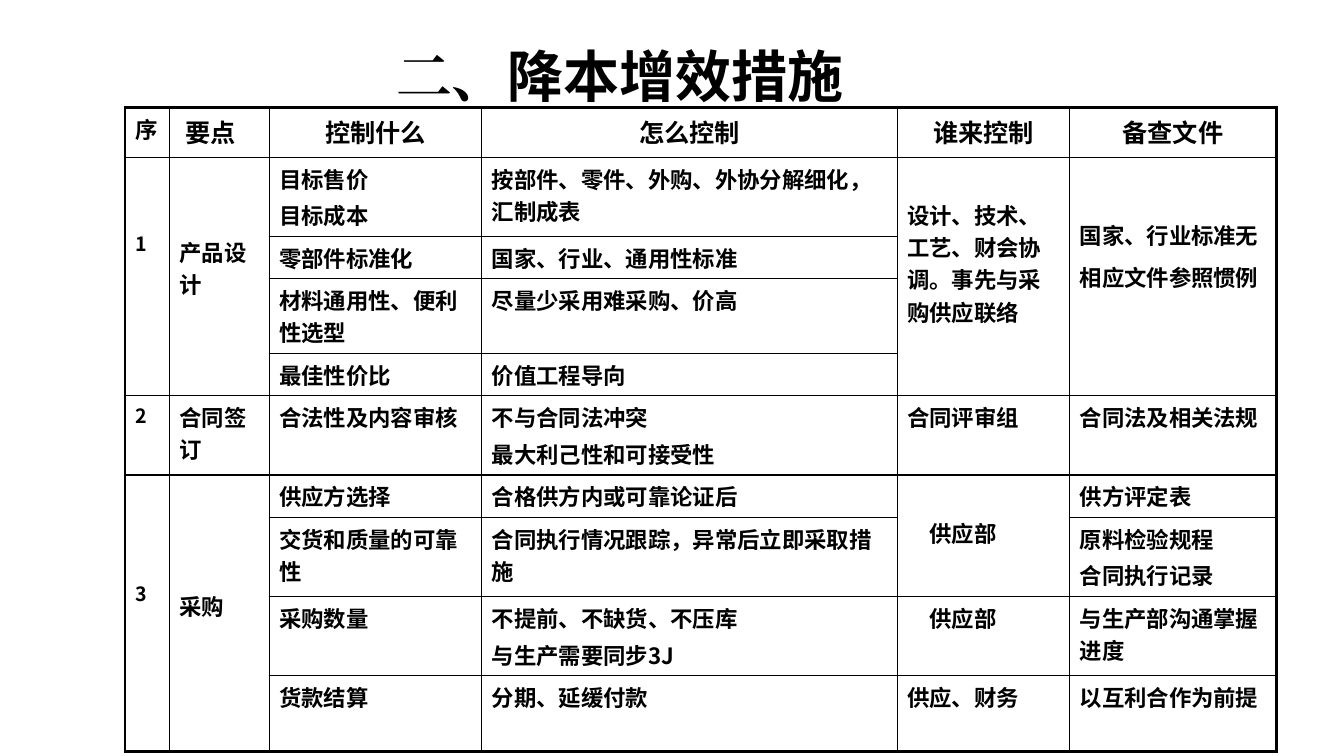
from lxml import etree
from pptx import Presentation
from pptx import util as u
from pptx.dml.color import RGBColor
from pptx.enum import text
from pptx.oxml import ns

COLUMN_WIDTHS = [0.44, 0.99, 2.11, 4.12, 1.71, 2.05]
ROW_HEIGHTS = [0.49, 0.75, 0.4, 0.69, 0.4, 0.75, 0.4, 0.75, 0.75, 0.75]
HEADINGS = ["序", "要点", "控制什么", "怎么控制", "谁来控制", "备查文件"]
MEASURES = [
    ["1", "产品设计", "目标售价\n目标成本", "按部件、零件、外购、外协分解细化，汇制成表",
     "设计、技术、工艺、财会协调。事先与采购供应联络", "国家、行业标准无相应文件参照惯例"],
    ["", "", "零部件标准化", "国家、行业、通用性标准", "", ""],
    ["", "", "材料通用性、便利性选型", "尽量少采用难采购、价高", "", ""],
    ["", "", "最佳性价比", "价值工程导向", "", ""],
    ["2", "合同签订", "合法性及内容审核", "不与合同法冲突\n最大利己性和可接受性",
     "合同评审组", "合同法及相关法规"],
    ["3", "采购", "供应方选择", "合格供方内或可靠论证后", "供应部", "供方评定表"],
    ["", "", "交货和质量的可靠性", "合同执行情况跟踪，异常后立即采取措施", "",
     "原料检验规程\n合同执行记录"],
    ["", "", "采购数量", "不提前、不缺货、不压库\n与生产需要同步3J", "供应部", "与生产部沟通掌握进度"],
    ["", "", "货款结算", "分期、延缓付款", "供应、财务", "以互利合作为前提"],
]
MERGED_ROWS = {(1, 0): 4, (1, 1): 4, (1, 4): 4, (1, 5): 4,
               (6, 0): 4, (6, 1): 4, (6, 4): 2}
TOP_MARGINS = {(1, 0): 0.71, (1, 1): 0.78, (1, 4): 0.41, (1, 5): 0.51,
               (6, 0): 1.03, (6, 1): 1.14, (6, 4): 0.41}
LEFT_MARGINS = {(0, 1): 0.16, (6, 4): 0.32, (8, 4): 0.32}
LINE_SPACING = {(1, 5): 1.3}


def color(value):
    return RGBColor.from_string(value)


class SlideBuilder:
    """Holds the ink, table font and current slide, and adds elements to it."""

    def __init__(self, slide, ink="000000", table_font="Noto Sans CJK SC"):
        self.slide = slide
        self.ink = ink
        self.table_font = table_font

    def style_run(self, run, size, family):
        run.font.size = u.Pt(size)
        run.font.bold = True
        run.font.name = family
        run.font.color.rgb = color(self.ink)
        east_asian = etree.SubElement(run.font._element, ns.qn("a:ea"))
        east_asian.set("typeface", family)

    def title(self, parts, left, top, width, height):
        box = self.slide.shapes.add_textbox(*map(u.Inches, (left, top, width, height)))
        box.text_frame.word_wrap = True
        for wording, family in parts:
            run = box.text_frame.paragraphs[0].add_run()
            run.text = wording
            self.style_run(run, 40, family)

    def border(self, cell, side, width):
        line = etree.SubElement(cell._tc.get_or_add_tcPr(), ns.qn(f"a:ln{side}"))
        line.set("w", str(u.Pt(width)))
        fill = etree.SubElement(line, ns.qn("a:solidFill"))
        etree.SubElement(fill, ns.qn("a:srgbClr")).set("val", self.ink)

    def cell(self, cell, wording, place):
        row, column = place
        cell.margin_top = u.Inches(TOP_MARGINS.get(place, 0.05))
        cell.margin_left = u.Inches(LEFT_MARGINS.get(place, 0.1))
        cell.text_frame.text = wording
        if row == 0:
            size = 18 if column else 16
        else:
            size = 16 if column else 14
        for number, paragraph in enumerate(cell.text_frame.paragraphs):
            if number:
                paragraph.space_before = u.Pt(size * 0.2)
            if place in LINE_SPACING:
                paragraph.line_spacing = LINE_SPACING[place]
            if row == 0 and column > 1:
                paragraph.alignment = text.PP_ALIGN.CENTER
            for run in paragraph.runs:
                self.style_run(run, size, self.table_font)

    def table(self, rows, left, top):
        size = sum(COLUMN_WIDTHS), sum(ROW_HEIGHTS)
        table = self.slide.shapes.add_table(
            len(rows), len(rows[0]), *map(u.Inches, (left, top, *size))).table
        table.first_row = table.horz_banding = False
        for column, width in zip(table.columns, COLUMN_WIDTHS):
            column.width = u.Inches(width)
        for row, height in zip(table.rows, ROW_HEIGHTS):
            row.height = u.Inches(height)
        for (row, column), span in MERGED_ROWS.items():
            table.cell(row, column).merge(table.cell(row + span - 1, column))
        last_row, last_column = len(rows) - 1, len(rows[0]) - 1
        for row, wordings in enumerate(rows):
            for column, wording in enumerate(wordings):
                cell = table.cell(row, column)
                bottom_row = row + MERGED_ROWS.get((row, column), 1) - 1
                outer = {"L": column == 0, "R": column == last_column,
                         "T": row == 0, "B": bottom_row == last_row}
                for side, on_edge in outer.items():
                    self.border(cell, side, 2.25 if on_edge else 1)
                cell.fill.background()
                if wording:
                    self.cell(cell, wording, (row, column))


def main():
    deck = Presentation()
    deck.slide_width, deck.slide_height = u.Inches(13.33), u.Inches(7.5)
    builder = SlideBuilder(deck.slides.add_slide(deck.slide_layouts[6]))
    builder.table([HEADINGS, *MEASURES], 1.24, 1.07)
    builder.title([("二、", "Times New Roman"), ("降本增效措施", "Calibri")],
                  3.83, 0.36, 6.93, 0.77)
    deck.save("out.pptx")


if __name__ == "__main__":
    main()
